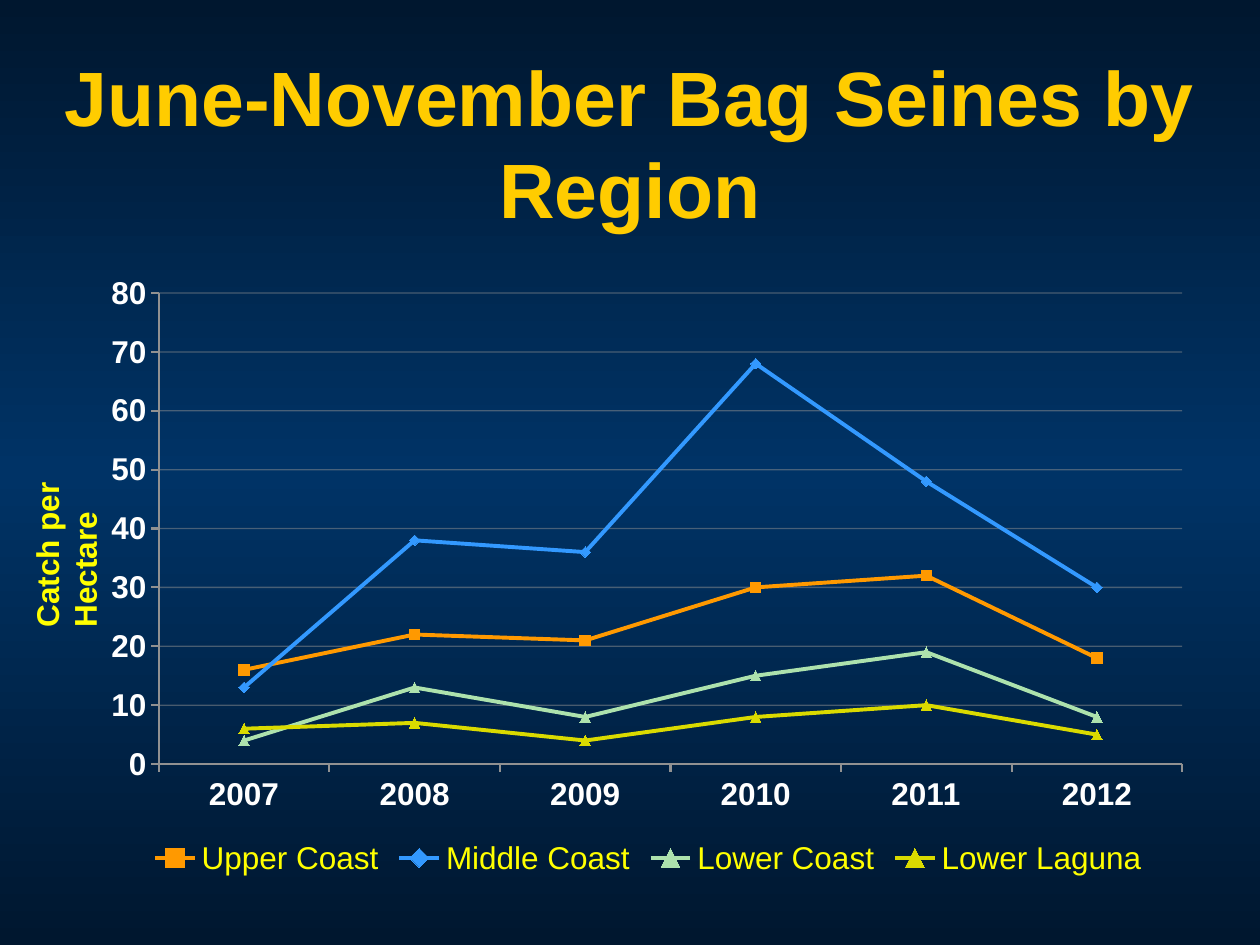
import copy
import pptx
import pptx.util
import pptx.chart.data
import pptx.enum.chart
import pptx.enum.text
import pptx.oxml
import pptx.oxml.ns
from pptx.dml.color import RGBColor

Pt = pptx.util.Pt
qn = pptx.oxml.ns.qn
MARK = pptx.enum.chart.XL_MARKER_STYLE
FONT = "Arial"
NIGHT = RGBColor(0x00, 0x17, 0x2F)
NAVY = RGBColor(0x00, 0x33, 0x66)
GOLD = RGBColor(0xFF, 0xCC, 0x00)
YELLOW = RGBColor(0xFF, 0xFF, 0x00)
WHITE = RGBColor(0xFF, 0xFF, 0xFF)
GRAY = RGBColor(0x91, 0x91, 0x91)
ORANGE = RGBColor(0xFF, 0x99, 0x00)
BLUE = RGBColor(0x33, 0x99, 0xFF)
MINT = RGBColor(0xAD, 0xE2, 0xAD)
OLIVE = RGBColor(0xDA, 0xDA, 0x00)

deck = pptx.Presentation()
deck.slide_width = pptx.util.Inches(10)
deck.slide_height = pptx.util.Inches(7.5)
slide = deck.slides.add_slide(deck.slide_layouts[6])


def place(*box):
    """Turn inches into lengths."""
    return [pptx.util.Inches(n) for n in box]


def style(font, size, color, bold):
    font.name, font.size, font.bold = FONT, Pt(size), bold
    font.color.rgb = color


# Background: dark, navy in the middle, dark
fill = slide.background.fill
fill.gradient()
fill.gradient_angle = 90
stops = slide.element.find(".//" + qn("a:gsLst"))
stops.insert(1, copy.deepcopy(stops[0]))
for stop, spot, color in zip(fill.gradient_stops, (0, 0.5, 1), (NIGHT, NAVY, NIGHT)):
    stop.position = spot
    stop.color.rgb = color

# Title
title = slide.shapes.add_textbox(*place(0, 0.5, 10, 1.25)).text_frame
title.word_wrap = True
title.vertical_anchor = pptx.enum.text.MSO_ANCHOR.MIDDLE
title.text = "June-November Bag Seines by Region"
title.paragraphs[0].alignment = pptx.enum.text.PP_ALIGN.CENTER
style(title.paragraphs[0].runs[0].font, 44, GOLD, True)

# Line chart
regions = [
    ("Upper Coast", (16, 22, 21, 30, 32, 18), ORANGE, MARK.SQUARE),
    ("Middle Coast", (13, 38, 36, 68, 48, 30), BLUE, MARK.DIAMOND),
    ("Lower Coast", (4, 13, 8, 15, 19, 8), MINT, MARK.TRIANGLE),
    ("Lower Laguna", (6, 7, 4, 8, 10, 5), OLIVE, MARK.TRIANGLE),
]
data = pptx.chart.data.CategoryChartData()
data.categories = [str(year) for year in range(2007, 2013)]
for name, catch, color, mark in regions:
    data.add_series(name, catch)
chart = slide.shapes.add_chart(
    pptx.enum.chart.XL_CHART_TYPE.LINE_MARKERS, *place(0.73, 2.08, 8.83, 4.92), data
).chart
style(chart.font, 18, YELLOW, False)
chart.has_title = False
chart.has_legend = True
chart.legend.position = pptx.enum.chart.XL_LEGEND_POSITION.BOTTOM
chart.legend.include_in_layout = False
style(chart.legend.font, 18, YELLOW, False)
chart.plots[0].vary_by_categories = False

for line, (name, catch, color, mark) in zip(chart.plots[0].series, regions):
    line.smooth = False
    line.format.line.color.rgb = color
    line.format.line.width = Pt(2.25)
    line.marker.style = mark
    line.marker.size = 6
    line.marker.format.fill.solid()
    line.marker.format.fill.fore_color.rgb = color
    line.marker.format.line.color.rgb = color

# Axes and half-clear grid lines
for axis in (chart.category_axis, chart.value_axis):
    style(axis.tick_labels.font, 18, WHITE, True)
    axis.major_tick_mark = pptx.enum.chart.XL_TICK_MARK.OUTSIDE
    axis.format.line.color.rgb = GRAY
    axis.format.line.width = Pt(1.25)
scale = chart.value_axis
scale.minimum_scale, scale.maximum_scale, scale.major_unit = 0, 80, 10
grid = scale.major_gridlines.format.line
grid.color.rgb = GRAY
grid.width = Pt(0.75)
tint = scale.major_gridlines._xAx.find(".//" + qn("c:majorGridlines")).find(
    ".//" + qn("a:srgbClr"))
tint.append(pptx.oxml.parse_xml(
    '<a:alpha %s val="50000"/>' % pptx.oxml.ns.nsdecls("a")))

# Plot area as shares of the chart
area = chart._chartSpace.find(".//" + qn("c:plotArea"))
for old in area.findall(qn("c:layout")):
    area.remove(old)
shares = "".join(
    '<c:%s val="%s"/>' % pair
    for pair in (("layoutTarget", "inner"), ("xMode", "edge"), ("yMode", "edge"),
                 ("x", 0.06), ("y", 0.05), ("w", 0.92), ("h", 0.76)))
area.insert(0, pptx.oxml.parse_xml(
    "<c:layout %s><c:manualLayout>%s</c:manualLayout></c:layout>"
    % (pptx.oxml.ns.nsdecls("c"), shares)))

# Upright axis caption
label = slide.shapes.add_textbox(*place(0.17, 2.75, 0.5, 2.33)).text_frame
label.word_wrap = True
label.auto_size = pptx.enum.text.MSO_AUTO_SIZE.SHAPE_TO_FIT_TEXT
label._txBody.bodyPr.set("vert", "vert270")
label.text = "Catch per Hectare"
style(label.paragraphs[0].runs[0].font, 18, YELLOW, True)

deck.save("out.pptx")
